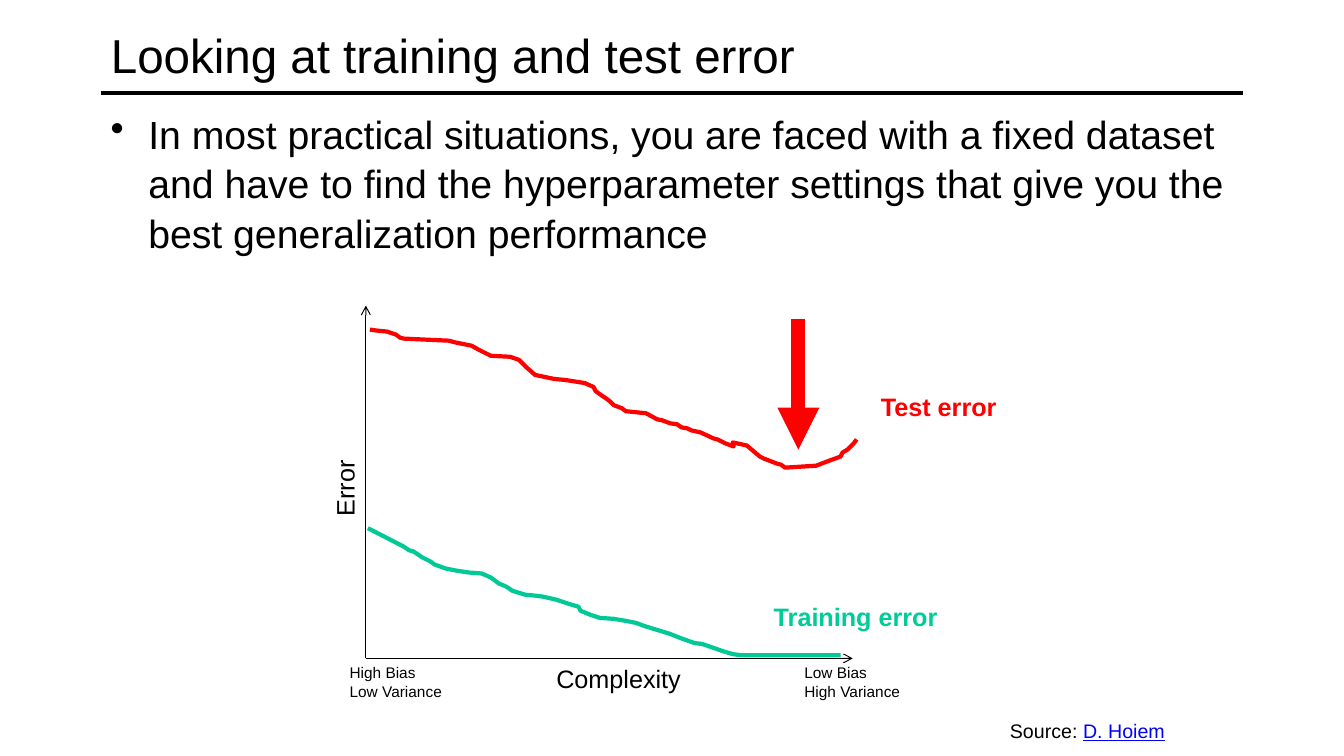
from lxml.etree import SubElement
from pptx import Presentation
from pptx.dml.color import RGBColor
from pptx.enum.shapes import MSO_CONNECTOR
from pptx.enum.text import MSO_ANCHOR, MSO_AUTO_SIZE, PP_ALIGN
from pptx.oxml.ns import qn
from pptx.util import Cm, Pt

BLACK = RGBColor(0x00, 0x00, 0x00)
RED = RGBColor(0xFF, 0x00, 0x00)
GREEN = RGBColor(0x00, 0xC8, 0x96)
LABEL_GREEN = RGBColor(0x00, 0xCC, 0x99)
LINK_BLUE = RGBColor(0x00, 0x00, 0xFF)
CURVE_UNIT = Cm(2.54) / 100  # curve points are hundredths of an inch

TRAINING_CURVE = [
    (365, 524), (400, 542), (406, 546), (410, 547), (419, 553), (427, 557),
    (431, 560), (442, 564), (452, 566), (465, 568), (478, 569), (487, 573),
    (495, 579), (500, 581), (504, 583), (508, 586), (521, 590), (531, 591),
    (539, 592), (552, 595), (564, 599), (574, 602), (576, 606), (586, 610),
    (595, 613), (609, 614), (621, 616), (631, 618), (639, 621), (652, 625),
    (665, 629), (675, 633), (689, 638), (697, 639), (717, 646), (727, 649),
    (735, 650), (834, 650)]
TEST_CURVE = [
    (367, 327), (374, 328), (384, 329), (393, 332), (397, 335), (401, 336),
    (445, 338), (453, 340), (468, 343), (475, 347), (479, 349), (487, 353),
    (506, 354), (515, 357), (523, 365), (531, 372), (550, 376), (561, 377),
    (580, 380), (589, 384), (591, 388), (595, 391), (601, 395), (605, 398),
    (609, 402), (617, 405), (621, 408), (641, 410), (652, 416), (657, 417),
    (665, 420), (672, 421), (676, 424), (682, 425), (686, 427), (695, 429),
    (708, 435), (712, 436), (716, 438), (720, 440), (728, 443), (727, 439),
    (732, 440), (741, 442), (754, 453), (758, 455), (771, 460), (775, 461),
    (779, 464), (810, 462), (815, 460), (823, 457), (834, 453), (836, 449),
    (841, 446), (847, 440), (850, 436)]


class SlideBuilder:
    """Holds the shared style and the current slide."""

    font_name = "Arial"

    def __init__(self, slide):
        self.slide = slide

    def style(self, paragraph, size, color=BLACK, bold=False):
        font = paragraph.font
        font.name, font.size, font.bold = self.font_name, Pt(size), bold
        font.color.rgb = color

    def title(self, text, left, top, width, height, size):
        heading = self.slide.shapes.title
        heading.left, heading.top = Cm(left), Cm(top)
        heading.width, heading.height = Cm(width), Cm(height)
        frame = heading.text_frame
        frame.text = text
        frame.auto_size = MSO_AUTO_SIZE.NONE
        frame.vertical_anchor = MSO_ANCHOR.MIDDLE
        frame.paragraphs[0].alignment = PP_ALIGN.LEFT
        self.style(frame.paragraphs[0], size)

    def text(self, lines, left, top, width, height, size, color=BLACK,
             bold=False, wrap=False, rotation=0):
        box = self.slide.shapes.add_textbox(
            Cm(left), Cm(top), Cm(width), Cm(height))
        box.rotation = rotation
        frame = box.text_frame
        frame.word_wrap = wrap
        frame.text = lines
        for paragraph in frame.paragraphs:
            self.style(paragraph, size, color, bold)
        return frame.paragraphs[0]

    def bullet(self, text, left, top, width, height, size):
        paragraph = self.text(text, left, top, width, height, size, wrap=True)
        paragraph.line_spacing = 1.05
        properties = paragraph.font._element.getparent()
        indent = Cm(0.95)
        properties.set("marL", str(indent))
        properties.set("indent", str(-indent))
        mark = properties.makeelement(qn("a:buChar"), {"char": "•"})
        properties.find(qn("a:defRPr")).addprevious(mark)

    def line(self, start, end, width, color=BLACK, arrowhead=None):
        connector = self.slide.shapes.add_connector(
            MSO_CONNECTOR.STRAIGHT, *map(Cm, start + end))
        connector.line.width = Pt(width)
        connector.line.color.rgb = color
        properties = connector._element.spPr
        if arrowhead:
            SubElement(properties.find(qn("a:ln")), qn("a:tailEnd"),
                       type=arrowhead)
        SubElement(properties, qn("a:effectLst"))

    def curve(self, points, color, width=3):
        builder = self.slide.shapes.build_freeform(
            *points[0], scale=CURVE_UNIT)
        builder.add_line_segments(points[1:], close=False)
        outline = builder.convert_to_shape()
        outline.shadow.inherit = False
        outline.fill.background()
        outline.line.color.rgb = color
        outline.line.width = Pt(width)


def main():
    deck = Presentation()
    deck.slide_width, deck.slide_height = Cm(33.87), Cm(19.05)
    page = SlideBuilder(deck.slides.add_slide(deck.slide_layouts[5]))

    # Heading and statement
    page.line((2.54, 2.34), (31.32, 2.34), 3)
    page.title("Looking at training and test error",
               2.54, 0.2, 30.05, 2.34, 34)
    page.bullet("In most practical situations, you are faced with a fixed "
                "dataset and have to find the hyperparameter settings that "
                "give you the best generalization performance",
                2.54, 2.59, 28.78, 4.72, 28)

    # Error curves and their names
    page.curve(TRAINING_CURVE, GREEN)
    page.curve(TEST_CURVE, RED)
    page.text("Training error", 19.25, 15.04, 4.67, 1.02, 18,
              LABEL_GREEN, bold=True)
    page.text("Test error", 21.95, 9.73, 3.45, 1.02, 18, RED, bold=True)

    # Axes and their labels
    origin, axis_y = (9.22, 16.59), 16.59
    page.line(origin, (9.22, 7.7), 0.75, arrowhead="arrow")
    page.line(origin, (21.49, axis_y), 0.75, arrowhead="arrow")
    page.text("Complexity", 13.77, axis_y, 3.68, 1.02, 18)
    page.text("Low Bias\nHigh Variance", 20.02, axis_y, 2.97, 1.19, 11)
    page.text("High Bias\nLow Variance", 8.56, axis_y, 2.9, 1.19, 11)
    page.text("Error", 7.72, 11.79, 1.93, 1.02, 18, rotation=270)

    # Arrow to the lowest test error
    page.line((20.12, 8.03), (20.12, 11.33), 10, RED, "triangle")

    # Source
    source = page.text("Source: ", 25.2, 17.98, 4.45, 0.86, 14)
    author = source.add_run()
    author.text = "D. Hoiem"
    author.font.underline = True
    author.font.color.rgb = LINK_BLUE

    deck.save("out.pptx")


if __name__ == "__main__":
    main()
